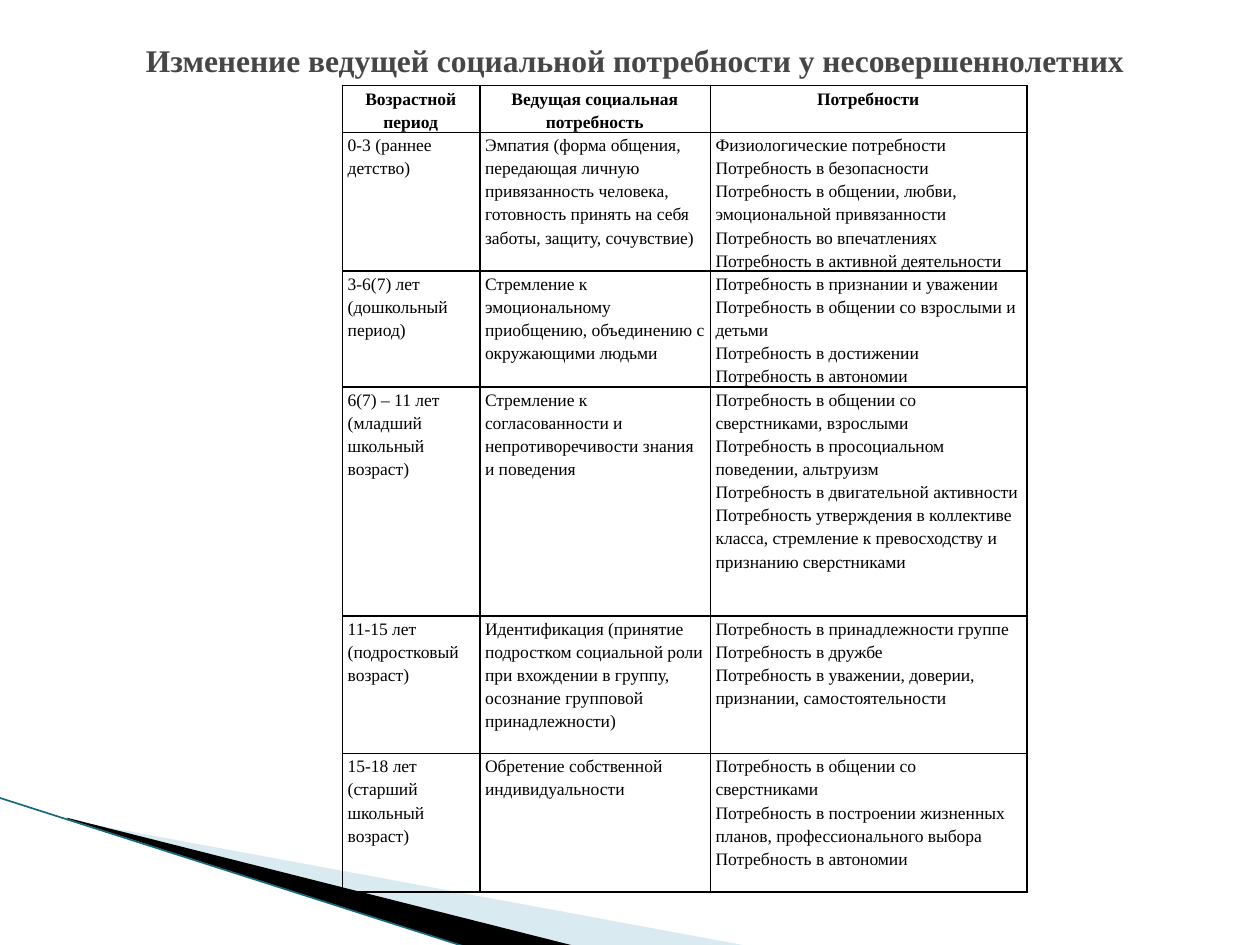
from lxml import etree
from pptx import Presentation
from pptx.dml.color import RGBColor
from pptx.enum.shapes import MSO_CONNECTOR
from pptx.enum.text import MSO_ANCHOR, PP_ALIGN
from pptx.oxml import parse_xml
from pptx.oxml.ns import nsdecls, qn
from pptx.util import Inches, Pt

COLORS = {"title": "464646", "text": "000000", "pale": "A0CBDC",
          "dark": "000000", "edge": "16697F", "border": "000000"}
FONT = "Times New Roman"

HEADERS = ["Возрастной период", "Ведущая социальная потребность", "Потребности"]
PERIODS = [
    ("0-3 (раннее детство)",
     "Эмпатия (форма общения, передающая личную привязанность человека, "
     "готовность принять на себя заботы, защиту, сочувствие)",
     ["Физиологические потребности",
      "Потребность в безопасности",
      "Потребность в общении, любви, эмоциональной привязанности",
      "Потребность во впечатлениях",
      "Потребность в активной деятельности"]),
    ("3-6(7) лет (дошкольный период)",
     "Стремление к эмоциональному приобщению, объединению с окружающими людьми",
     ["Потребность в признании и уважении",
      "Потребность в общении со взрослыми и детьми",
      "Потребность в достижении",
      "Потребность в автономии"]),
    ("6(7) – 11 лет (младший школьный возраст)",
     "Стремление к согласованности и непротиворечивости знания и поведения",
     ["Потребность в общении со сверстниками, взрослыми",
      "Потребность в просоциальном поведении, альтруизм",
      "Потребность в двигательной активности",
      "Потребность утверждения в коллективе класса, стремление к превосходству "
      "и признанию сверстниками"]),
    ("11-15 лет (подростковый возраст)",
     "Идентификация (принятие подростком социальной роли при вхождении в группу, "
     "осознание групповой принадлежности)",
     ["Потребность в принадлежности группе",
      "Потребность в дружбе",
      "Потребность в уважении, доверии, признании, самостоятельности"]),
    ("15-18 лет (старший школьный возраст)",
     "Обретение собственной индивидуальности",
     ["Потребность в общении со сверстниками",
      "Потребность в построении жизненных планов, профессионального выбора",
      "Потребность в автономии"]),
]
COLUMN_WIDTHS = [1.09, 1.83, 2.51]
ROW_HEIGHTS = [0.37, 1.1, 0.92, 1.82, 1.09, 1.1]


def style_paragraph(para, size, color, bold):
    para.font.name = FONT
    para.font.size = Pt(size)
    para.font.bold = bold
    para.font.color.rgb = RGBColor.from_string(COLORS[color])


def add_wedge(page, points, color):
    """Draw a filled outline without a line through points given in inches."""
    corners = [(Inches(x), Inches(y)) for x, y in points]
    builder = page.shapes.build_freeform(*corners[0])
    builder.add_line_segments(corners[1:], close=True)
    wedge = builder.convert_to_shape()
    wedge.shadow.inherit = False
    wedge.fill.solid()
    wedge.fill.fore_color.rgb = RGBColor.from_string(COLORS[color])
    wedge.line.fill.background()
    return wedge


deck = Presentation()
deck.slide_width, deck.slide_height = Inches(10), Inches(7.5)
page = deck.slides.add_slide(deck.slide_layouts[6])

# Corner decoration
pale_wedge = add_wedge(page, [(0.55, 6.51), (5.95, 7.51), (4.56, 7.51), (0.55, 6.5)], "pale")
pale_color = pale_wedge._element.spPr.find(".//" + qn("a:srgbClr"))
etree.SubElement(pale_color, qn("a:alpha"), val="40000")
add_wedge(page, [(0.53, 6.49), (4.57, 7.51), (3.72, 7.52), (0.54, 6.5)], "dark")

edge = page.shapes.add_connector(
    MSO_CONNECTOR.STRAIGHT, Inches(-0.01), Inches(6.33), Inches(3.71), Inches(7.52))
edge.line.color.rgb = RGBColor.from_string(COLORS["edge"])
edge.line.width = Pt(0.95)
etree.SubElement(edge._element.spPr, qn("a:effectLst"))

# Title
title = page.shapes.add_textbox(Inches(1.06), Inches(0.13), Inches(9), Inches(0.69))
title.text_frame.word_wrap = True
title.text_frame.vertical_anchor = MSO_ANCHOR.MIDDLE
heading = title.text_frame.paragraphs[0]
heading.text = "Изменение ведущей социальной потребности у несовершеннолетних"
style_paragraph(heading, 18, "title", True)

# Table of needs
rows = [HEADERS, *PERIODS]
table = page.shapes.add_table(
    len(rows), len(HEADERS), Inches(2.72), Inches(0.68),
    Inches(sum(COLUMN_WIDTHS)), Inches(sum(ROW_HEIGHTS))).table
table.first_row = table.horz_banding = False
for column, width in zip(table.columns, COLUMN_WIDTHS):
    column.width = Inches(width)
for row, height in zip(table.rows, ROW_HEIGHTS):
    row.height = Inches(height)

for row_index, texts in enumerate(rows):
    is_header = row_index == 0
    for column_index, content in enumerate(texts):
        cell = table.cell(row_index, column_index)
        cell.margin_left, cell.margin_right = Inches(0.04), Inches(0.05)
        cell.margin_top = cell.margin_bottom = 0
        cell.text = content if isinstance(content, str) else "\n".join(content)
        for para in cell.text_frame.paragraphs:
            para.alignment = PP_ALIGN.CENTER if is_header else PP_ALIGN.LEFT
            para.line_spacing = Pt(13.2)
            style_paragraph(para, 10, "text", is_header)
        properties = cell._tc.get_or_add_tcPr()
        for side in ("lnL", "lnR", "lnT", "lnB"):
            properties.append(parse_xml(
                f'<a:{side} {nsdecls("a")} w="{Pt(1)}"><a:solidFill>'
                f'<a:srgbClr val="{COLORS["border"]}"/></a:solidFill></a:{side}>'))
        cell.fill.background()

deck.save("out.pptx")
